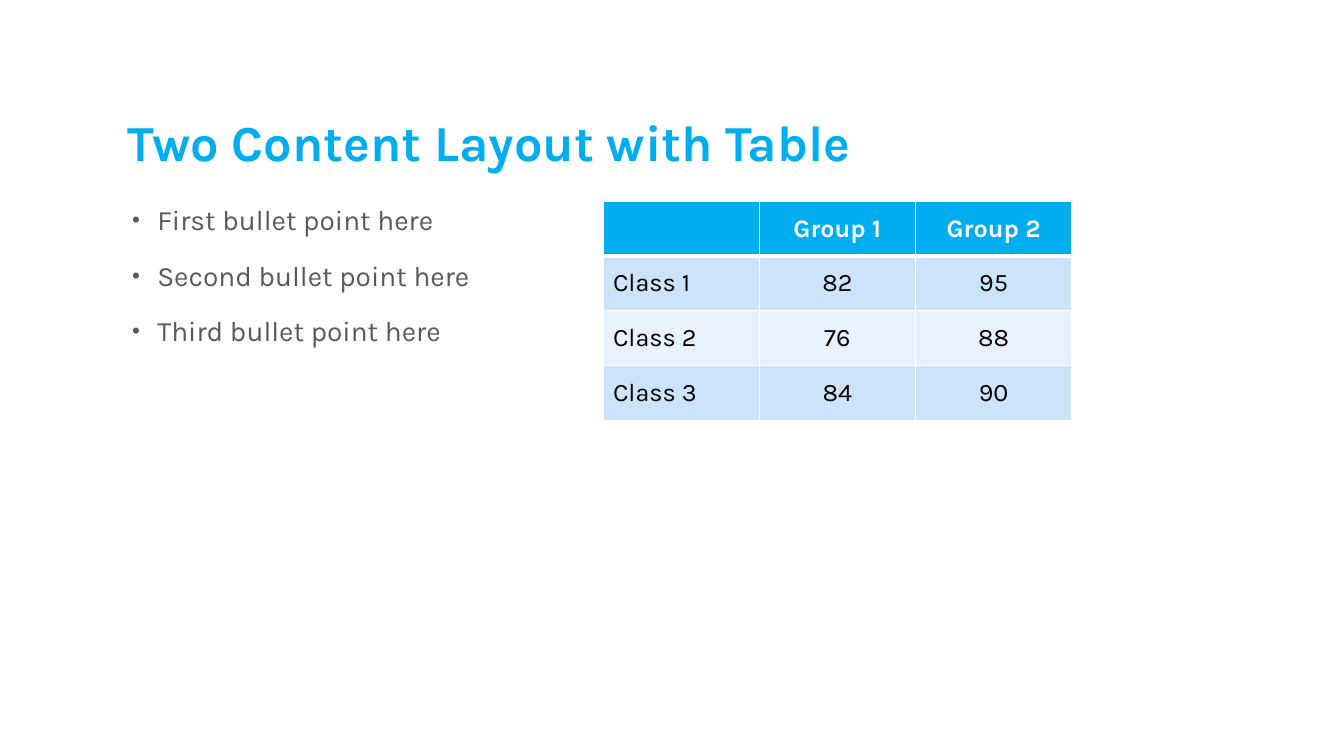
from lxml import etree
from pptx import Presentation
from pptx import util as u
from pptx.dml.color import RGBColor
from pptx.enum import text
from pptx.oxml import ns

FONT = "Karla"
COLORS = {
    "accent": "00AEEF",
    "body": "595959",
    "white": "FFFFFF",
    "black": "000000",
    "band_dark": "CCE3F9",
    "band_light": "E7F2FC",
}
BULLETS = ["First bullet point here", "Second bullet point here", "Third bullet point here"]
SCORES = [
    ["", "Group 1", "Group 2"],
    ["Class 1", "82", "95"],
    ["Class 2", "76", "88"],
    ["Class 3", "84", "90"],
]


def add_element(parent, tag, **attributes):
    """Append a DrawingML child element and return it."""
    return etree.SubElement(parent, ns.qn(tag), attributes)


def add_span(para, words, size, color, bold=False):
    """Add one formatted run to a paragraph."""
    span = para.add_run()
    span.text = words
    span.font.name = FONT
    span.font.size = u.Pt(size)
    span.font.bold = bold
    span.font.color.rgb = RGBColor.from_string(COLORS[color])


def place(box, left, top, width, height, anchor):
    """Move a placeholder and fix its text frame."""
    box.left, box.top = u.Inches(left), u.Inches(top)
    box.width, box.height = u.Inches(width), u.Inches(height)
    box.text_frame.word_wrap = True
    box.text_frame.auto_size = text.MSO_AUTO_SIZE.NONE
    box.text_frame.vertical_anchor = anchor


def fill_title(box, words):
    """Write the slide title."""
    place(box, 1.16, 0.58, 9.5, 1.17, text.MSO_ANCHOR.BOTTOM)
    para = box.text_frame.paragraphs[0]
    para.alignment = text.PP_ALIGN.LEFT
    para.line_spacing = 0.8
    add_span(para, words, 36, "accent", bold=True)


def fill_bullets(box, items):
    """Write the bulleted list."""
    place(box, 1.16, 2, 4.65, 4.58, text.MSO_ANCHOR.TOP)
    frame = box.text_frame
    for index, words in enumerate(items):
        para = frame.add_paragraph() if index else frame.paragraphs[0]
        para.line_spacing = 0.9
        para.space_before = u.Pt(18 if index else 0)
        properties = para._p.get_or_add_pPr()
        properties.set("marL", str(u.Inches(0.3)))
        properties.set("indent", str(u.Inches(-0.25)))
        bullet_color = add_element(properties, "a:buClr")
        add_element(bullet_color, "a:srgbClr", val=COLORS["body"])
        add_element(properties, "a:buSzPct", val="80000")
        add_element(properties, "a:buFont", typeface="Arial")
        add_element(properties, "a:buChar", char="•")
        add_span(para, words, 20, "body")


def set_borders(cell, top, bottom):
    """Draw white cell borders with the given top and bottom widths."""
    properties = cell._tc.get_or_add_tcPr()
    for side, width in (("L", 1), ("R", 1), ("T", top), ("B", bottom)):
        line = add_element(properties, f"a:ln{side}", w=str(u.Pt(width)))
        fill = add_element(line, "a:solidFill")
        add_element(fill, "a:srgbClr", val=COLORS["white"])


def add_score_table(slide, rows):
    """Add the banded table of scores."""
    table = slide.shapes.add_table(
        len(rows), len(rows[0]),
        u.Inches(5.98), u.Inches(2), u.Inches(4.65), u.Inches(2.17),
    ).table
    for r, row in enumerate(rows):
        header = r == 0
        band = "accent" if header else "band_dark" if r % 2 else "band_light"
        for c, words in enumerate(row):
            cell = table.cell(r, c)
            set_borders(cell, top=3 if r == 1 else 1, bottom=3 if header else 1)
            cell.fill.solid()
            cell.fill.fore_color.rgb = RGBColor.from_string(COLORS[band])
            cell.vertical_anchor = text.MSO_ANCHOR.MIDDLE
            para = cell.text_frame.paragraphs[0]
            para.alignment = text.PP_ALIGN.CENTER if c else text.PP_ALIGN.LEFT
            if words:
                add_span(para, words, 18, "white" if header else "black", bold=header)


def main():
    """Build and save the slide."""
    deck = Presentation()
    deck.slide_width, deck.slide_height = u.Inches(13.33), u.Inches(7.5)
    page = deck.slides.add_slide(deck.slide_layouts[1])
    fill_title(page.shapes.title, "Two Content Layout with Table")
    fill_bullets(page.placeholders[1], BULLETS)
    add_score_table(page, SCORES)
    deck.save("out.pptx")


if __name__ == "__main__":
    main()
